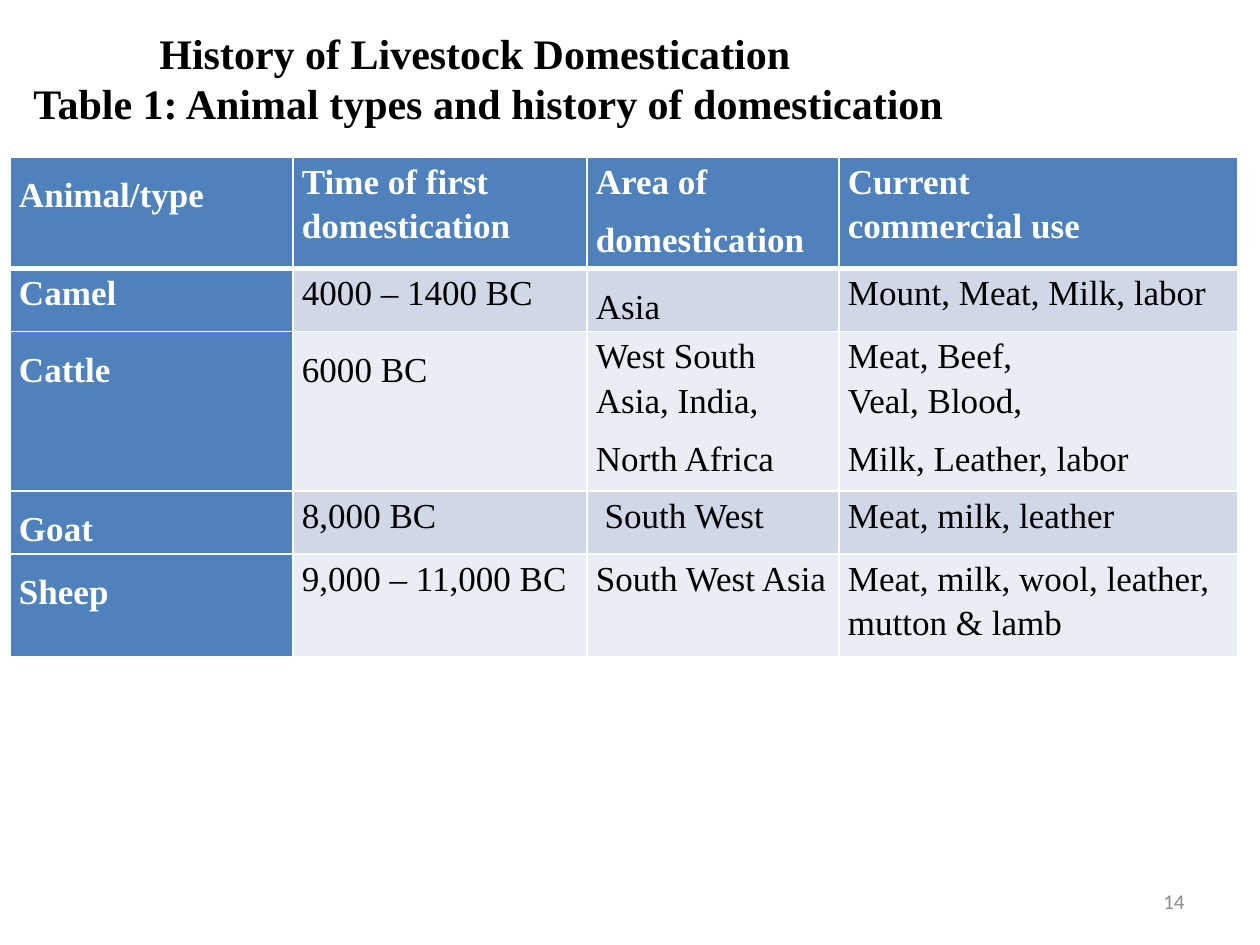
from lxml import etree
from pptx import Presentation
from pptx.dml.color import RGBColor
from pptx.enum.text import MSO_ANCHOR, PP_ALIGN
from pptx.oxml.ns import qn
from pptx.util import Pt

LEFT, RIGHT, JUSTIFY = PP_ALIGN.LEFT, PP_ALIGN.RIGHT, PP_ALIGN.JUSTIFY
TOP, MIDDLE = MSO_ANCHOR.TOP, MSO_ANCHOR.MIDDLE

EMU_PER_PX = 914400 / 126
SERIF, SANS = "Times New Roman", "Calibri"
BLACK = RGBColor(0x00, 0x00, 0x00)
WHITE = RGBColor(0xFF, 0xFF, 0xFF)
GREY = RGBColor(0x8C, 0x8C, 0x8C)
BLUE = RGBColor(0x4F, 0x81, 0xBD)
BANDS = (RGBColor(0xE9, 0xED, 0xF4), RGBColor(0xD0, 0xD8, 0xE8))

TIGHT, LOOSE = 1.15, 1.5
COL_WIDTHS = (283, 294, 252, 399)
ROW_HEIGHTS = (103, 58, 148, 58, 103)
ROWS = [
    [[("Animal/type", LOOSE)],
     [("Time of first domestication", TIGHT)],
     [("Area of", TIGHT), ("domestication", LOOSE)],
     [("Current", TIGHT), ("commercial use", TIGHT)]],
    [[("Camel", TIGHT)],
     [("4000 – 1400 BC", TIGHT)],
     [("Asia", LOOSE)],
     [("Mount, Meat, Milk, labor", TIGHT)]],
    [[("Cattle", LOOSE)],
     [("6000 BC", LOOSE)],
     [("West South Asia, India,", TIGHT), ("North Africa", LOOSE)],
     [("Meat, Beef,", TIGHT), ("Veal, Blood,", TIGHT), ("Milk, Leather, labor", LOOSE)]],
    [[("Goat", LOOSE)],
     [("8,000 BC", TIGHT)],
     [(" South West", TIGHT)],
     [("Meat, milk, leather", TIGHT)]],
    [[("Sheep", LOOSE)],
     [("9,000 – 11,000 BC", TIGHT)],
     [("South West Asia", TIGHT)],
     [("Meat, milk, wool, leather, mutton & lamb", TIGHT)]],
]


def px(n):
    return round(n * EMU_PER_PX)


def add_paragraph(tf, i, text, size, font, color, bold=False, align=LEFT):
    p = tf.paragraphs[0] if i == 0 else tf.add_paragraph()
    p.alignment = align
    r = p.add_run()
    r.text = text
    r.font.size = Pt(size)
    r.font.name = font
    r.font.bold = bold
    r.font.color.rgb = color
    return p


def add_text_box(slide, x, y, w, h, anchor=TOP):
    tf = slide.shapes.add_textbox(px(x), px(y), px(w), px(h)).text_frame
    tf.word_wrap = True
    tf.vertical_anchor = anchor
    return tf


def set_border(cell, side, width):
    ln = etree.SubElement(cell._tc.get_or_add_tcPr(), qn(f"a:ln{side}"), w=str(Pt(width)))
    fill = etree.SubElement(ln, qn("a:solidFill"))
    etree.SubElement(fill, qn("a:srgbClr"), val=str(WHITE))


def fill_cell(cell, lines, row, col):
    heading = row == 0 or col == 0
    cell.margin_left = cell.margin_right = px(9)
    cell.margin_top = cell.margin_bottom = 0
    for side in "LRTB":
        header_edge = (row, side) in ((0, "B"), (1, "T"))
        set_border(cell, side, 3 if header_edge else 1)
    cell.fill.solid()
    cell.fill.fore_color.rgb = BLUE if heading else BANDS[row % 2]
    for i, (text, spacing) in enumerate(lines):
        p = add_paragraph(cell.text_frame, i, text, 20, SERIF,
                          WHITE if heading else BLACK, heading,
                          JUSTIFY if spacing == LOOSE else LEFT)
        p.line_spacing = spacing


def add_domestication_table(slide):
    table = slide.shapes.add_table(
        len(ROWS), len(COL_WIDTHS), px(10), px(157),
        px(sum(COL_WIDTHS)), px(sum(ROW_HEIGHTS))).table
    table.first_col = True
    for column, width in zip(table.columns, COL_WIDTHS):
        column.width = px(width)
    for row, height in zip(table.rows, ROW_HEIGHTS):
        row.height = px(height)
    for r, cells in enumerate(ROWS):
        for c, lines in enumerate(cells):
            fill_cell(table.cell(r, c), lines, r, c)


def add_title(slide):
    tf = add_text_box(slide, 21, 21, 1218, 115)
    p = add_paragraph(tf, 0, "History of Livestock Domestication", 24, SERIF, BLACK, True)
    pPr = p._p.get_or_add_pPr()
    pPr.set("marL", str(px(126)))
    pPr.set("indent", "0")
    add_paragraph(tf, 1, "Table 1: Animal types and history of domestication",
                  24, SERIF, BLACK, True)


def add_slide_number(slide):
    tf = add_text_box(slide, 903, 876, 294, 50, MIDDLE)
    add_paragraph(tf, 0, "14", 12, SANS, GREY, align=RIGHT)


def main():
    prs = Presentation()
    prs.slide_width, prs.slide_height = px(1260), px(945)
    slide = prs.slides.add_slide(prs.slide_layouts[6])
    add_slide_number(slide)
    add_domestication_table(slide)
    add_title(slide)
    prs.save("out.pptx")


if __name__ == "__main__":
    main()
